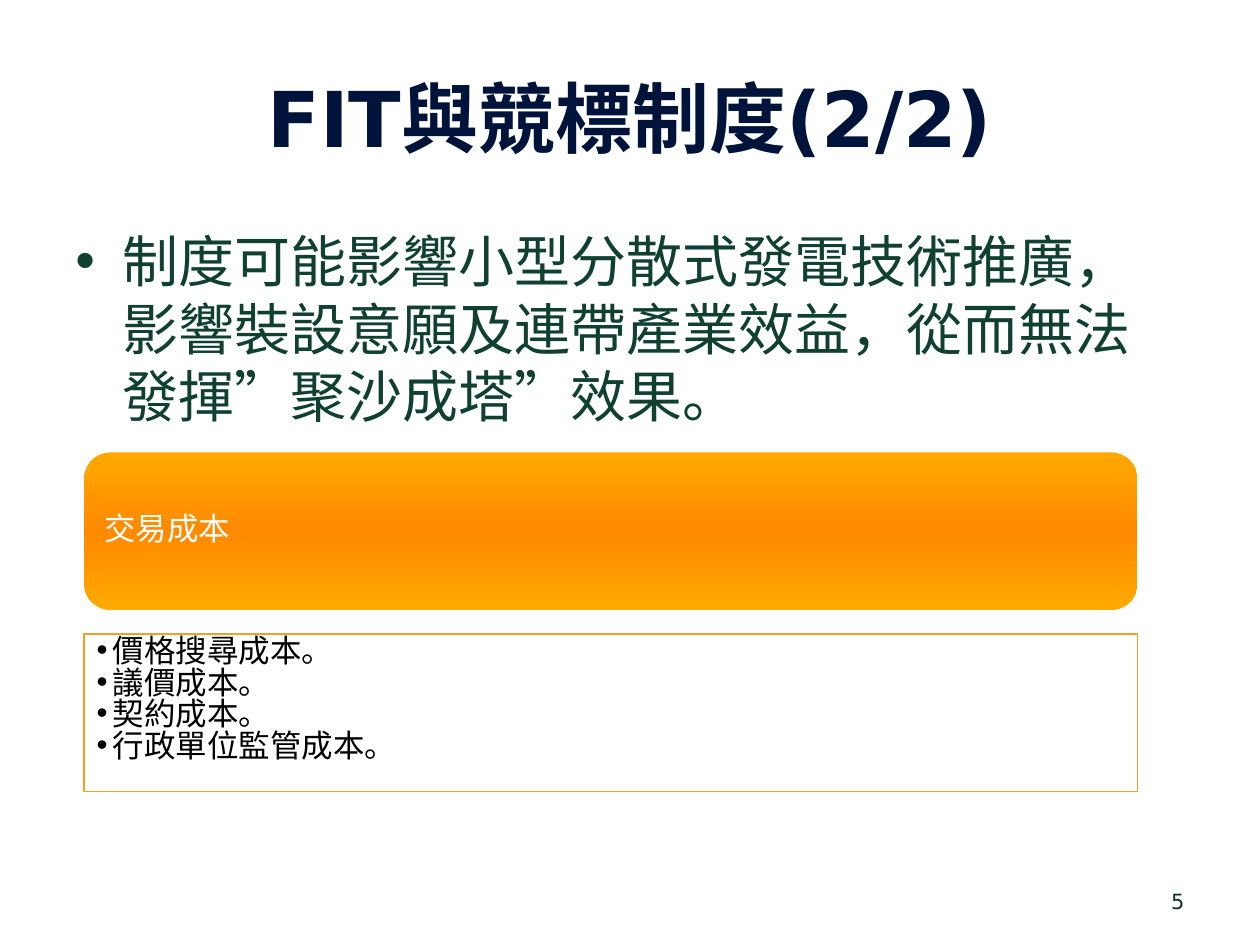
from lxml.etree import SubElement
from pptx import Presentation
from pptx.dml.color import RGBColor
from pptx.enum.shapes import MSO_SHAPE as Shape
from pptx.enum.text import MSO_ANCHOR as Anchor, MSO_AUTO_SIZE as AutoSize, PP_ALIGN as Align
from pptx.oxml.ns import qn
from pptx.util import Cm, Pt

TITLE_ONLY = 5


def rgb(value):
    return RGBColor.from_string(value)


class SlideBuilder:
    heading_font = "DejaVu Sans"
    card_font = "Arial"
    card_left, card_width, card_height = 1.7, 21.23, 3.18

    def __init__(self, presentation):
        self.slide = presentation.slides.add_slide(presentation.slide_layouts[TITLE_ONLY])

    def fill_text(self, shape, lines, font, size, color, bold=False, anchor=Anchor.TOP,
                  bullet_indent=None, **formats):
        """Fill a shape with paragraphs; formats are paragraph attributes."""
        frame = shape.text_frame
        frame.word_wrap = True
        frame.auto_size = AutoSize.NONE
        frame.vertical_anchor = anchor
        formats = {"alignment": Align.LEFT, **formats}
        for index, line in enumerate(lines):
            paragraph = frame.paragraphs[0] if index == 0 else frame.add_paragraph()
            if bullet_indent:
                self.add_bullet(paragraph, bullet_indent, color)
            for name, value in formats.items():
                if name != "space_before" or index:
                    setattr(paragraph, name, value)
            run = paragraph.add_run()
            run.text = line
            run.font.color.rgb = rgb(color)
            for name, value in {"name": font, "size": Pt(size), "bold": bold}.items():
                setattr(run.font, name, value)

    def add_bullet(self, paragraph, indent, color):
        properties = paragraph._p.get_or_add_pPr()
        properties.set("marL", str(Cm(indent)))
        properties.set("indent", str(-Cm(indent)))
        bullet_color = SubElement(properties, qn("a:buClr"))
        SubElement(bullet_color, qn("a:srgbClr"), val=color)
        SubElement(properties, qn("a:buFont"), typeface="Arial")
        SubElement(properties, qn("a:buChar"), char="•")

    def title(self, text, left, top, width, height, **style):
        shape = self.slide.shapes.title
        place = {"left": left, "top": top, "width": width, "height": height}
        for name, value in place.items():
            setattr(shape, name, Cm(value))
        self.fill_text(shape, [text], self.heading_font, **style)

    def text(self, text, left, top, width, height, **style):
        box = self.slide.shapes.add_textbox(Cm(left), Cm(top), Cm(width), Cm(height))
        self.fill_text(box, [text], self.heading_font, **style)

    def card(self, kind, top, lines, **style):
        shape = self.slide.shapes.add_shape(
            kind, Cm(self.card_left), Cm(top), Cm(self.card_width), Cm(self.card_height))
        shape.shadow.inherit = False
        self.fill_text(shape, lines, self.card_font, size=18, **style)
        return shape

    def gradient_card(self, top, text, edge, middle):
        card = self.card(Shape.ROUNDED_RECTANGLE, top, [text], color="FFFFFF",
                         anchor=Anchor.MIDDLE, line_spacing=0.85)
        card.line.fill.background()
        card.fill.gradient()
        card.fill.gradient_angle = 90
        stops = card._element.spPr.find(qn("a:gradFill")).find(qn("a:gsLst"))
        for stop in list(stops):
            stops.remove(stop)
        for percent, color in ((0, edge), (50, middle), (100, edge)):
            stop = SubElement(stops, qn("a:gs"), pos=str(percent * 1000))
            SubElement(stop, qn("a:srgbClr"), val=color)

    def outlined_card(self, top, lines, outline):
        card = self.card(Shape.RECTANGLE, top, lines, color="000000", bullet_indent=0.32,
                         level=1, line_spacing=0.75, space_before=Pt(1.8))
        card.fill.solid()
        card.fill.fore_color.rgb = rgb("FFFFFF")
        fill_color = card._element.spPr.find(qn("a:solidFill")).find(qn("a:srgbClr"))
        SubElement(fill_color, qn("a:alpha"), val="90000")
        card.line.color.rgb = rgb(outline)
        card.line.width = Pt(1)


def main():
    presentation = Presentation()
    presentation.slide_width, presentation.slide_height = Cm(25.4), Cm(19.05)
    builder = SlideBuilder(presentation)
    builder.title("FIT與競標制度(2/2)", 1.27, 0.76, 22.86, 3.18, size=44, color="00133A",
                  bold=True, anchor=Anchor.MIDDLE, alignment=Align.CENTER)
    builder.text("制度可能影響小型分散式發電技術推廣，影響裝設意願及連帶產業效益，"
                 "從而無法發揮”聚沙成塔”效果。",
                 1.27, 4.45, 22.86, 12.57, size=32, color="104031", bullet_indent=0.95)
    builder.gradient_card(9.12, "交易成本", edge="FFA900", middle="FF8A00")
    builder.outlined_card(12.78, ["價格搜尋成本。", "議價成本。", "契約成本。", "行政單位監管成本。"],
                          outline="F29F26")
    builder.text("5", 18.21, 17.65, 5.92, 1.02, size=12, color="0C3226",
                 anchor=Anchor.MIDDLE, alignment=Align.RIGHT)
    presentation.save("out.pptx")


if __name__ == "__main__":
    main()
